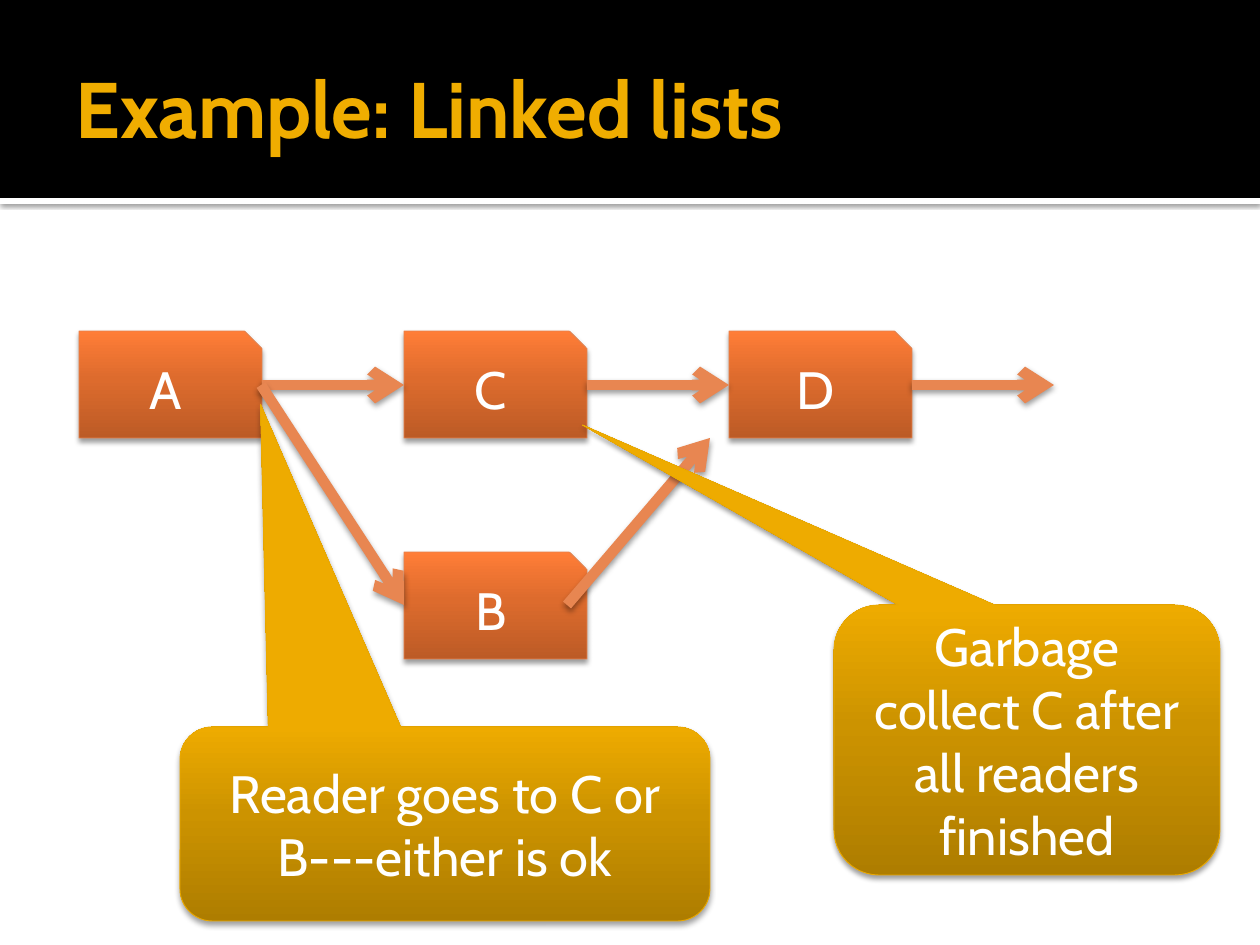
"""Build the linked list slide with its nodes, arrows and two callouts."""
from copy import deepcopy

from lxml.etree import SubElement
from pptx import Presentation
from pptx.dml.color import RGBColor
from pptx.enum.shapes import MSO_CONNECTOR, MSO_SHAPE
from pptx.enum.text import MSO_ANCHOR, PP_ALIGN
from pptx.oxml import parse_xml
from pptx.oxml.ns import nsdecls, qn
from pptx.util import Emu, Pt

BLACK = RGBColor(0x00, 0x00, 0x00)
WHITE = RGBColor(0xFF, 0xFF, 0xFF)
AMBER = RGBColor(0xF0, 0xAD, 0x00)
ARROW = RGBColor(0xE8, 0x86, 0x51)
NODE_EDGE = RGBColor(0xE7, 0x82, 0x4C)
NODE_RAMP = [RGBColor(0xBC, 0x5B, 0x26), RGBColor(0xDD, 0x6B, 0x2D), RGBColor(0xFF, 0x7D, 0x37)]
CALLOUT_EDGE = RGBColor(0xEB, 0xA9, 0x00)
CALLOUT_RAMP = [RGBColor(0xAE, 0x7D, 0x00), RGBColor(0xCC, 0x93, 0x00), RGBColor(0xEE, 0xAB, 0x00)]
RAMP_STOPS = [0, 0.55, 1]


def px(*lengths):
    return [Emu(round(length * 914400 / 126)) for length in lengths]


def write(box, text, size=30, color=WHITE, bold=False, align=PP_ALIGN.CENTER):
    frame = box.text_frame
    frame.word_wrap = True
    frame.vertical_anchor = MSO_ANCHOR.MIDDLE
    para = frame.paragraphs[0]
    para.alignment = align
    span = para.add_run()
    span.text = text
    span.font.name = "Cabin"
    span.font.size = Pt(size)
    span.font.bold = bold
    span.font.color.rgb = color


deck = Presentation()
deck.slide_width, deck.slide_height = px(1260, 945)
page = deck.slides.add_slide(deck.slide_layouts[6])
shapes = page.shapes

rule = shapes.add_shape(MSO_SHAPE.RECTANGLE, *px(0, 198, 1260, 6))
banner = shapes.add_shape(MSO_SHAPE.RECTANGLE, *px(0, 0, 1260, 198))
for band, color in [(rule, WHITE), (banner, BLACK)]:
    band.shadow.inherit = False
    band.fill.solid()
    band.fill.fore_color.rgb = color
    band.line.fill.background()

title = shapes.add_textbox(*px(63, 21, 1134, 173))
title.text_frame.margin_right = Pt(3.6)
write(title, "Example: Linked lists", size=45, color=AMBER, bold=True, align=PP_ALIGN.LEFT)

panels = []
LEFT, TOP, WIDTH, HEIGHT, STEP = 79, 331, 183, 107, 325
for label, column, top in [("A", 0, TOP), ("C", 1, TOP), ("D", 2, TOP), ("B", 1, 552)]:
    node = shapes.add_shape(MSO_SHAPE.SNIP_1_RECTANGLE, *px(LEFT + column * STEP, top, WIDTH, HEIGHT))
    write(node, label)
    panels.append((node, NODE_RAMP, NODE_EDGE))

arrows = []
links = [(LEFT + WIDTH + i * STEP, 385, LEFT + (i + 1) * STEP, 385) for i in range(3)]
links += [(567, 605, 710, 438), (261, 385, 404, 605)]
for ends in links:
    arrow = shapes.add_connector(MSO_CONNECTOR.STRAIGHT, *px(*ends))
    arrow.line.color.rgb = ARROW
    arrow.line.width = Pt(6)
    SubElement(arrow.line._get_or_add_ln(), qn("a:tailEnd"), type="arrow")
    arrows.append(arrow)

callouts = [
    ("Reader goes to C or B---either is ok", (180, 727, 530, 194), (-0.348, -2.164)),
    ("Garbage collect C after all readers finished", (834, 605, 386, 270), (-1.152, -1.167)),
]
for text, place, tip in callouts:
    callout = shapes.add_shape(MSO_SHAPE.ROUNDED_RECTANGULAR_CALLOUT, *px(*place))
    callout.adjustments[0], callout.adjustments[1] = tip
    write(callout, text)
    panels.append((callout, CALLOUT_RAMP, CALLOUT_EDGE))

for panel, ramp, edge in panels:
    panel.shadow.inherit = False
    panel.line.color.rgb = edge
    panel.line.width = Pt(0.5)
    panel.fill.gradient()
    panel.fill.gradient_angle = 90
    stop_list = panel._element.spPr.find(".//" + qn("a:gsLst"))
    stop_list.insert(1, deepcopy(stop_list[0]))
    for stop, color, position in zip(panel.fill.gradient_stops, ramp, RAMP_STOPS):
        stop.color.rgb = color
        stop.position = position

shadows = [(rule, 60, 2.5, 0.8)]
shadows += [(panel, 38, 3.1, 2) for panel, _, _ in panels]
shadows += [(arrow, 38, 3.5, 2) for arrow in arrows]
for owner, opacity, blur, distance in shadows:
    properties = owner._element.spPr
    for effects in properties.findall(qn("a:effectLst")):
        properties.remove(effects)
    properties.append(parse_xml(
        f'<a:effectLst {nsdecls("a")}><a:outerShdw blurRad="{Pt(blur)}" dist="{Pt(distance)}" '
        f'dir="5400000" rotWithShape="0"><a:srgbClr val="{BLACK}">'
        f'<a:alpha val="{opacity * 1000}"/></a:srgbClr></a:outerShdw></a:effectLst>'))

deck.save("out.pptx")
